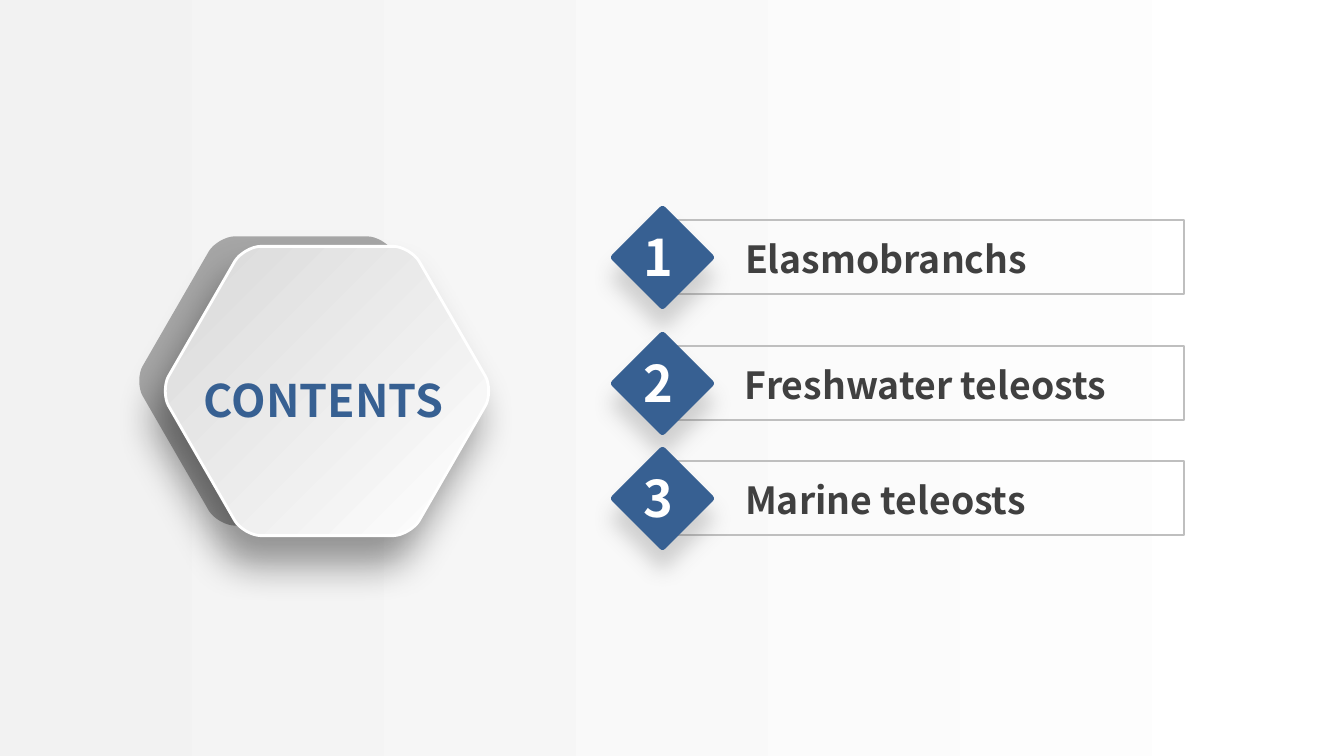
from dataclasses import dataclass
from math import cos, radians, sin

from lxml.etree import SubElement
from pptx import Presentation
from pptx.dml.color import RGBColor
from pptx.enum.shapes import MSO_SHAPE
from pptx.enum.text import MSO_ANCHOR, MSO_AUTO_SIZE, PP_ALIGN
from pptx.oxml.ns import qn
from pptx.util import Emu, Pt

EMU_PER_PX = 914400 / 134.4
SLIDE_SIZE = (1344, 756)
HEXAGON_RADIUS = 167
CORNER_CUT = 17
CURVE_STEPS = 8


@dataclass(frozen=True)
class Theme:
    font: str = "Noto Sans CJK SC"
    blue: str = "376092"
    text: str = "404040"
    white: str = "FFFFFF"
    border: str = "BFBFBF"
    back_hexagon: str = "A6A6A6"
    background: tuple = ("F2F2F2", "FFFFFF")
    front_hexagon: tuple = ("D9D9D9", "FFFFFF")
    title_size: int = 24
    item_size: int = 20
    number_size: int = 27


THEME = Theme()
# Colour, opacity in percent, blur and distance in points, direction in degrees
HEXAGON_SHADOW = ("000000", 40, 21, 16, 113)
DIAMOND_SHADOW = ("595959", 25, 11, 11, 90)

# Top of the row, label, label width
ITEMS = [
    (220, "Elasmobranchs", 366),
    (346, "Freshwater teleosts", 434),
    (461, "Marine teleosts", 366),
]


def px(length):
    return Emu(round(length * EMU_PER_PX))


def color(value):
    return RGBColor.from_string(value)


def set_gradient(fill, colors, angle):
    """Fill with two colours; the angle runs counter-clockwise."""
    fill.gradient()
    fill.gradient_angle = angle
    for stop, value in zip(fill.gradient_stops, colors):
        stop.color.rgb = color(value)


def style_shape(shape, fill=None, line=None, line_width=1, shadow=None):
    shape.shadow.inherit = False
    if isinstance(fill, tuple):
        set_gradient(shape.fill, fill, 315)
    elif fill:
        shape.fill.solid()
        shape.fill.fore_color.rgb = color(fill)
    else:
        shape.fill.background()
    if line:
        shape.line.color.rgb = color(line)
        shape.line.width = Pt(line_width)
    else:
        shape.line.fill.background()
    if shadow:
        add_shadow(shape, *shadow)


def add_shadow(shape, value, opacity, blur, distance, direction):
    effects = shape._element.spPr.find(qn("a:effectLst"))
    outer = SubElement(
        effects, qn("a:outerShdw"), blurRad=str(Pt(blur)), dist=str(Pt(distance)),
        dir=str(direction * 60000), algn="ctr", rotWithShape="0")
    shade = SubElement(outer, qn("a:srgbClr"), val=value)
    SubElement(shade, qn("a:alpha"), val=str(opacity * 1000))


def add_shape(shapes, kind, box, **style):
    shape = shapes.add_shape(kind, *map(px, box))
    style_shape(shape, **style)
    return shape


def add_text(shapes, box, text, size, value, frame_format, align=None):
    frame = shapes.add_textbox(*map(px, box)).text_frame
    settings = {
        "margin_left": px(10), "margin_right": px(10),
        "margin_top": px(5), "margin_bottom": px(5),
        "word_wrap": True, **frame_format,
    }
    for name, setting in settings.items():
        setattr(frame, name, setting)
    paragraph = frame.paragraphs[0]
    paragraph.alignment = align
    run = paragraph.add_run()
    run.text = text
    for name, setting in {"name": THEME.font, "size": Pt(size), "bold": True}.items():
        setattr(run.font, name, setting)
    run.font.color.rgb = color(value)


def toward(start, end, distance):
    """Point at a distance from one hexagon corner toward the next."""
    share = distance / HEXAGON_RADIUS
    return tuple(a + (b - a) * share for a, b in zip(start, end))


def rounded_hexagon_points(center):
    """Outline of a regular hexagon with each corner drawn as a Bezier curve."""
    corners = [
        (center[0] + HEXAGON_RADIUS * cos(radians(angle)),
         center[1] + HEXAGON_RADIUS * sin(radians(angle)))
        for angle in range(0, 360, 60)
    ]
    points = []
    for index, corner in enumerate(corners):
        before, after = corners[index - 1], corners[(index + 1) % 6]
        controls = (
            toward(corner, before, CORNER_CUT), toward(corner, before, CORNER_CUT / 2),
            toward(corner, after, CORNER_CUT / 2), toward(corner, after, CORNER_CUT),
        )
        for step in range(CURVE_STEPS + 1):
            t = step / CURVE_STEPS
            weights = ((1 - t) ** 3, 3 * t * (1 - t) ** 2, 3 * t * t * (1 - t), t ** 3)
            points.append(tuple(
                px(sum(w * control[axis] for w, control in zip(weights, controls)))
                for axis in (0, 1)))
    return points


def add_hexagon(shapes, center, **style):
    start, *rest = rounded_hexagon_points(center)
    builder = shapes.build_freeform(*start, scale=1.0)
    builder.add_line_segments(rest, close=True)
    style_shape(builder.convert_to_shape(), **style)


def add_item(slide, number, top, label, label_width):
    shapes = slide.shapes.add_group_shape().shapes
    grow = {"auto_size": MSO_AUTO_SIZE.SHAPE_TO_FIT_TEXT}
    add_shape(shapes, MSO_SHAPE.RECTANGLE, (661, top, 523, 74), line=THEME.border)
    add_text(shapes, (735, top + 11, label_width, 55), label,
             THEME.item_size, THEME.text, grow)
    diamond = add_shape(shapes, MSO_SHAPE.ROUNDED_RECTANGLE, (625, top, 75, 75),
                        fill=THEME.blue, shadow=DIAMOND_SHADOW)
    diamond.adjustments[0] = 0.05
    diamond.rotation = 45
    add_text(shapes, (634, top + 1, 51, 71), str(number),
             THEME.number_size, THEME.white, {**grow, "word_wrap": False})


def main():
    presentation = Presentation()
    presentation.slide_width, presentation.slide_height = map(px, SLIDE_SIZE)
    slide = presentation.slides.add_slide(presentation.slide_layouts[6])
    set_gradient(slide.background.fill, THEME.background, 0)

    add_hexagon(slide.shapes, (301, 381), fill=THEME.back_hexagon)
    add_hexagon(slide.shapes, (327, 391), fill=THEME.front_hexagon,
                line=THEME.white, line_width=1.5, shadow=HEXAGON_SHADOW)
    add_text(slide.shapes, (177, 372, 293, 56), "CONTENTS", THEME.title_size,
             THEME.blue, {"vertical_anchor": MSO_ANCHOR.MIDDLE}, PP_ALIGN.CENTER)

    for number, item in enumerate(ITEMS, start=1):
        add_item(slide, number, *item)
    presentation.save("out.pptx")


if __name__ == "__main__":
    main()
